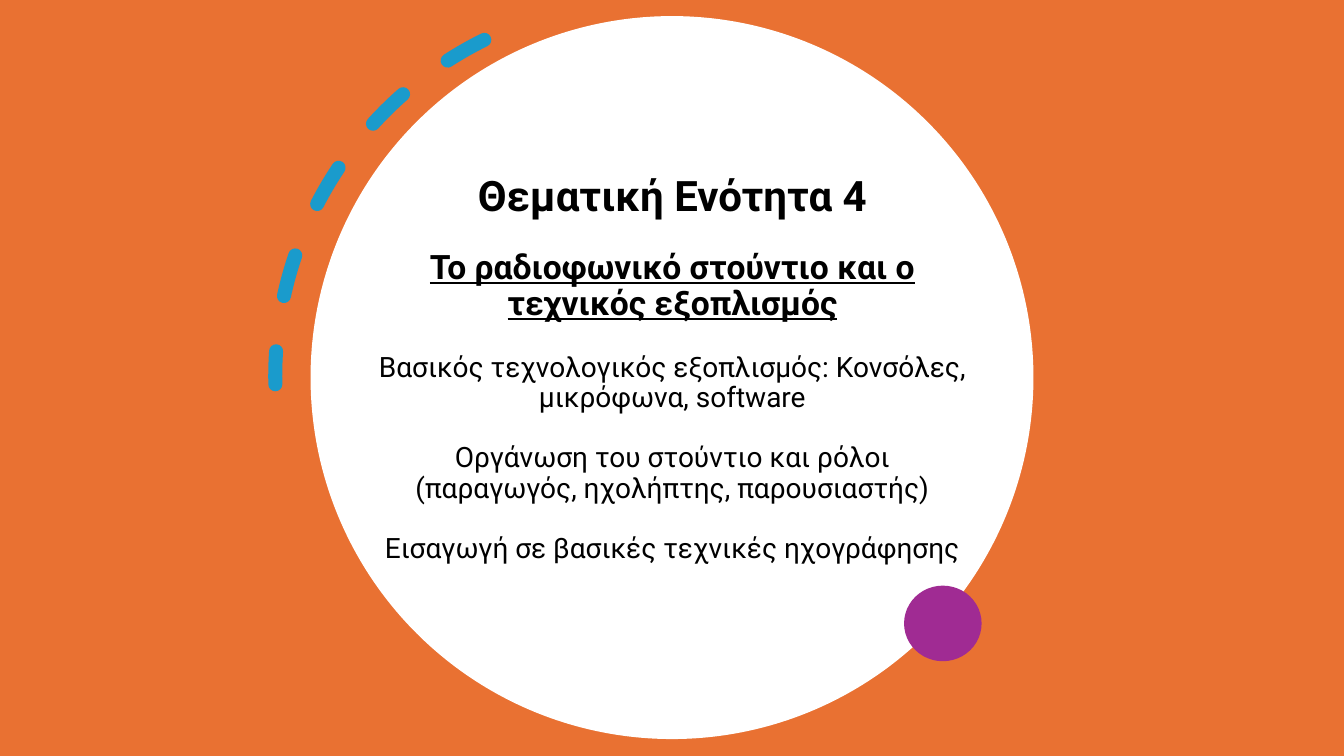
from pptx import Presentation
from pptx import util as u
from pptx.dml.color import RGBColor
from pptx.enum import dml, shapes, text
from pptx.oxml import ns
from lxml import etree

COLOURS = {
    "orange": "E97132",
    "white": "FFFFFF",
    "black": "000000",
    "blue": "0F9ED5",
    "purple": "A02B93",
}
WIDTH, HEIGHT = 960, 540


def colour(name):
    return RGBColor.from_string(COLOURS[name])


def write(paragraph, content, size, bold=False, underline=False, before=0):
    paragraph.alignment = text.PP_ALIGN.CENTER
    paragraph.line_spacing = 0.9
    paragraph.space_before = u.Pt(before)
    run = paragraph.add_run()
    run.text = content
    font = run.font
    font.name = "Roboto"
    font.size = u.Pt(size)
    font.bold = bold
    font.underline = underline
    font.color.rgb = colour("black")


class SlideBuilder:
    def __init__(self, slide):
        self.slide = slide

    def preset(self, kind, left, top, width, height):
        shape = self.slide.shapes.add_shape(
            kind, u.Pt(left), u.Pt(top), u.Pt(width), u.Pt(height))
        shape.shadow.inherit = False
        return shape

    def filled(self, kind, fill, *box):
        shape = self.preset(kind, *box)
        shape.fill.solid()
        shape.fill.fore_color.rgb = colour(fill)
        shape.line.fill.background()

    def dashed_arc(self, line_colour, left, top, diameter, angles, rotation):
        shape = self.preset(shapes.MSO_SHAPE.ARC, left, top, diameter, diameter)
        for index, angle in enumerate(angles):
            shape.adjustments[index] = angle * 0.6
        shape.rotation = rotation
        shape.fill.background()
        line = shape.line
        line.color.rgb = colour(line_colour)
        line.width = u.Pt(10)
        line.dash_style = dml.MSO_LINE.DASH
        properties = shape.element.spPr
        properties.find(ns.qn("a:xfrm")).set("flipV", "1")
        outline = properties.find(ns.qn("a:ln"))
        outline.set("cap", "rnd")
        shade = outline.find(".//" + ns.qn("a:srgbClr"))
        etree.SubElement(shade, ns.qn("a:alpha")).set("val", "95000")

    def text_box(self, left, top, width, height, entries):
        box = self.slide.shapes.add_textbox(
            u.Pt(left), u.Pt(top), u.Pt(width), u.Pt(height))
        frame = box.text_frame
        frame.word_wrap = True
        frame.vertical_anchor = text.MSO_ANCHOR.BOTTOM
        for index, (content, style) in enumerate(entries):
            paragraph = frame.add_paragraph() if index else frame.paragraphs[0]
            write(paragraph, content, before=21.5 if index else 0, **style)


def main():
    presentation = Presentation()
    presentation.slide_width = u.Pt(WIDTH)
    presentation.slide_height = u.Pt(HEIGHT)
    builder = SlideBuilder(
        presentation.slides.add_slide(presentation.slide_layouts[6]))

    oval = shapes.MSO_SHAPE.OVAL
    builder.filled(shapes.MSO_SHAPE.RECTANGLE, "orange", 0, 0, WIDTH, HEIGHT)
    builder.filled(oval, "white", 221.8, 11.5, 516.4, 516.4)

    heading = {"size": 30, "bold": True}
    subject = {"size": 24, "bold": True, "underline": True}
    topic = {"size": 20}
    builder.text_box(261.4, 108.7, 437.8, 298.1, [
        ("Θεματική Ενότητα 4", heading),
        ("Το ραδιοφωνικό στούντιο και ο τεχνικός εξοπλισμός", subject),
        ("Βασικός τεχνολογικός εξοπλισμός: Κονσόλες, μικρόφωνα, software", topic),
        ("Οργάνωση του στούντιο και ρόλοι (παραγωγός, ηχολήπτης, παρουσιαστής)", topic),
        ("Εισαγωγή σε βασικές τεχνικές ηχογράφησης", topic),
    ])

    builder.dashed_arc("blue", 196.6, 0.7, 536.4, (270, 334.89), 153.7)
    builder.filled(oval, "purple", 645.8, 418.3, 55.4, 54)
    presentation.save("out.pptx")


if __name__ == "__main__":
    main()
